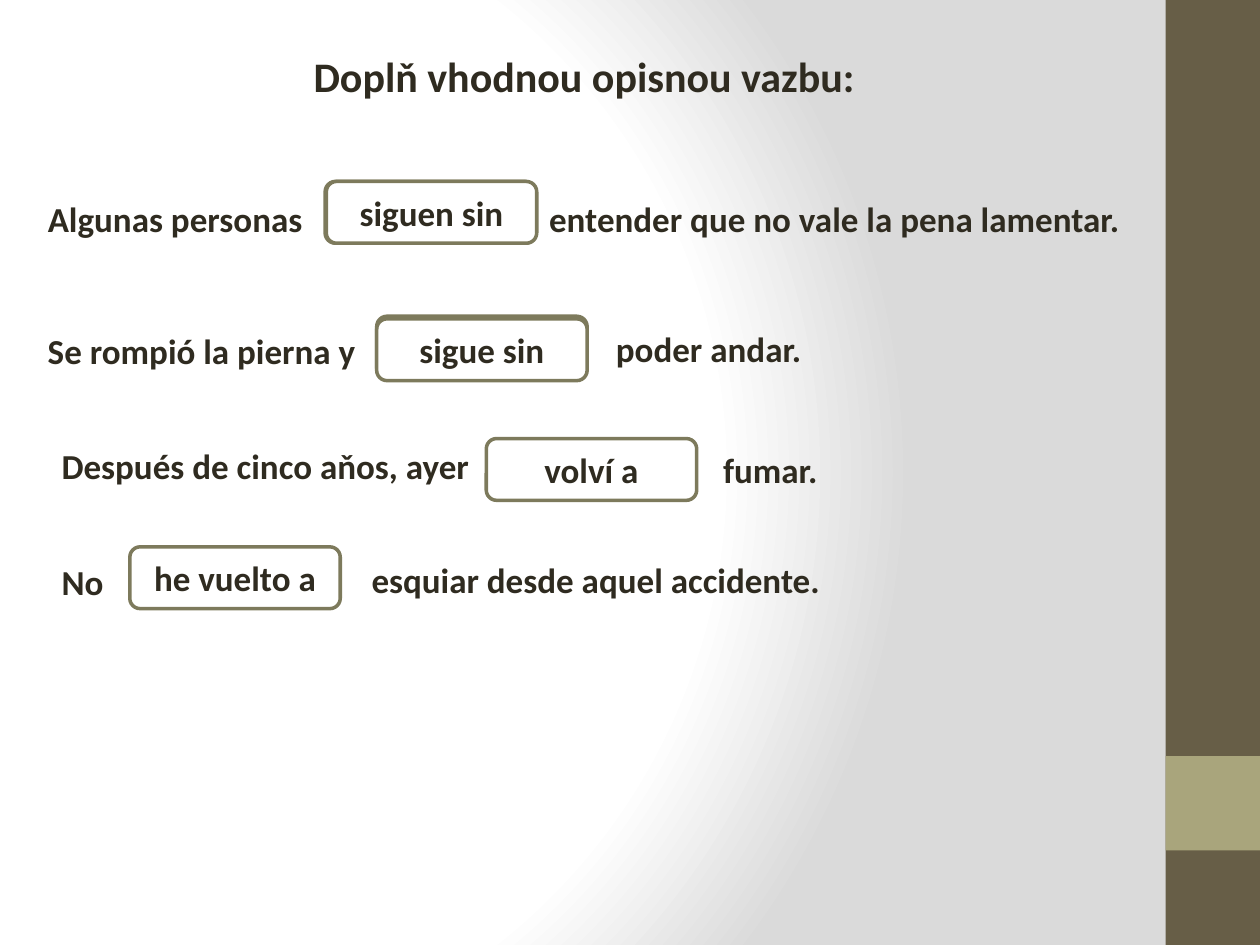
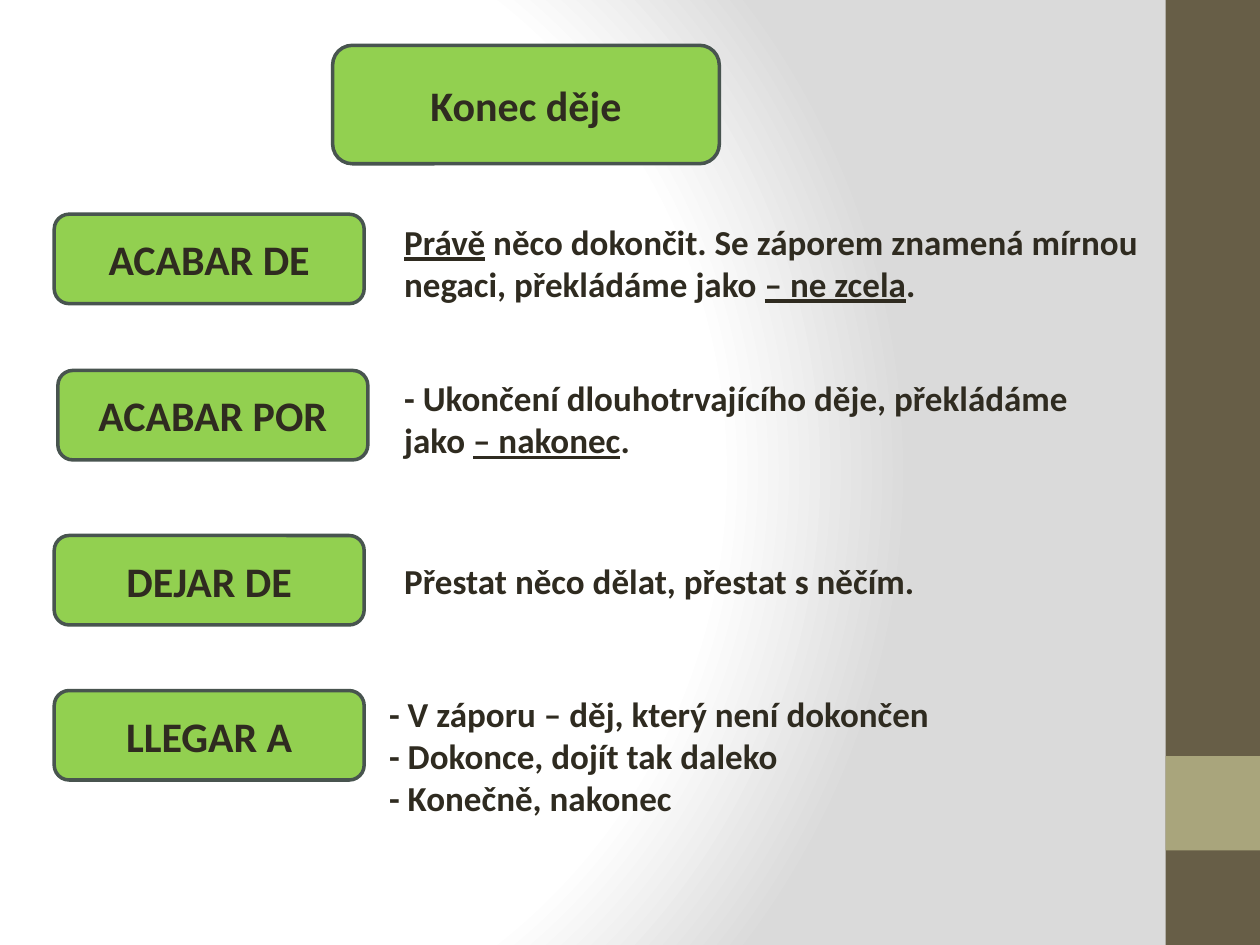
import dataclasses

import lxml.etree
import pptx
import pptx.dml.color
import pptx.enum.shapes
import pptx.enum.text
import pptx.oxml
import pptx.oxml.ns
import pptx.util

Pt = pptx.util.Pt
Shape = pptx.enum.shapes.MSO_SHAPE
Align = pptx.enum.text.PP_ALIGN
Anchor = pptx.enum.text.MSO_ANCHOR
AutoSize = pptx.enum.text.MSO_AUTO_SIZE


@dataclasses.dataclass(frozen=True)
class Theme:
    font: str = "Calibri"
    ink: str = "2F2B20"
    paper: str = "FFFFFF"
    shade: str = "DADADA"
    band: str = "675E47"
    band_accent: str = "A9A57C"
    gap_line: str = "7D7A5C"
    term_fill: str = "92D050"
    term_line: str = "48544F"
    heading: int = 24
    body: int = 20
    line_width: int = 2


def color(code):
    return pptx.dml.color.RGBColor.from_string(code)


def write(frame, text, *, theme, size, align=Align.LEFT):
    """Fill a frame, one paragraph per line; _underscores_ mark underlining."""
    for number, line in enumerate(text.split("\n")):
        para = frame.paragraphs[0] if number == 0 else frame.add_paragraph()
        para.alignment = align
        for part, words in enumerate(line.split("_")):
            if not words:
                continue
            span = para.add_run()
            span.text = words
            span.font.name = theme.font
            span.font.size = Pt(size)
            span.font.bold = True
            span.font.color.rgb = color(theme.ink)
            if part % 2:
                span.font.underline = True


class Lesson:
    width, height = 720, 540
    band_width = 54
    gap_size = (120.24, 35.3)
    term_size = (177.1, 51.1)

    def __init__(self, theme):
        self.theme = theme
        self.deck = pptx.Presentation()
        self.deck.slide_width = Pt(self.width)
        self.deck.slide_height = Pt(self.height)
        self.page = None
        self.paint_background()

    def paint_background(self):
        master = self.deck.slide_master
        master.background.fill.solid()
        stops = ((0, self.theme.paper), (75, self.theme.paper), (100, self.theme.shade))
        stop_xml = "".join(
            f'<a:gs pos="{place * 1000}"><a:srgbClr val="{code}"/></a:gs>'
            for place, code in stops
        )
        gradient = lxml.etree.fromstring(
            f'<a:gradFill xmlns:a="{pptx.oxml.ns.nsuri("a")}" rotWithShape="1">'
            f"<a:gsLst>{stop_xml}</a:gsLst>"
            '<a:path path="circle">'
            '<a:fillToRect l="20000" t="50000" r="100000" b="50000"/>'
            "</a:path></a:gradFill>"
        )
        solid = master.element.find(".//" + pptx.oxml.ns.qn("p:bgPr")).find(
            pptx.oxml.ns.qn("a:solidFill")
        )
        solid.getparent().replace(solid, gradient)

    def new_page(self):
        self.page = self.deck.slides.add_slide(self.deck.slide_layouts[6])
        left = self.width - self.band_width
        self.shape(Shape.RECTANGLE, left, 0, self.band_width, self.height, self.theme.band)
        self.shape(Shape.RECTANGLE, left, 432, self.band_width, self.band_width,
                   self.theme.band_accent)

    def shape(self, kind, left, top, width, height, fill, line=None):
        box = self.page.shapes.add_shape(kind, Pt(left), Pt(top), Pt(width), Pt(height))
        box.shadow.inherit = False
        box.fill.solid()
        box.fill.fore_color.rgb = color(fill)
        if line:
            box.line.color.rgb = color(line)
            box.line.width = Pt(self.theme.line_width)
        else:
            box.line.fill.background()
        return box

    def panel(self, left, top, size, text, fill, line, text_size):
        box = self.shape(Shape.ROUNDED_RECTANGLE, left, top, *size, fill, line)
        if text:
            box.text_frame.vertical_anchor = Anchor.MIDDLE
            write(box.text_frame, text, theme=self.theme, size=text_size, align=Align.CENTER)

    def gap(self, left, top, answer=""):
        self.panel(left, top, self.gap_size, answer, self.theme.paper,
                   self.theme.gap_line, self.theme.body)

    def term(self, left, top, text, size=term_size):
        self.panel(left, top, size, text, self.theme.term_fill,
                   self.theme.term_line, self.theme.heading)

    def label(self, left, top, width, text, size=None):
        size = size or self.theme.body
        height = 1.2 * size * len(text.split("\n")) + 7.2
        box = self.page.shapes.add_textbox(Pt(left), Pt(top), Pt(width), Pt(height))
        box.text_frame.word_wrap = False
        box.text_frame.auto_size = AutoSize.SHAPE_TO_FIT_TEXT
        write(box.text_frame, text, theme=self.theme, size=size)


def build_exercise(lesson):
    lesson.new_page()
    lesson.label(172.1, 25.2, 326.9, "Doplň vhodnou opisnou vazbu:", lesson.theme.heading)
    for left, top in ((185.8, 103.7), (215.3, 180.7)):
        lesson.gap(left, top)
    sentences = (
        ((20.2, 109.4, 166.3, "Algunas personas"),
         (186.5, 103.7, "siguen sin"),
         (306.7, 109.4, 343.4, "entender que no vale la pena lamentar.")),
        ((20.2, 185, 196.6, "Se rompió la pierna y"),
         (215.3, 182.2, "sigue sin"),
         (344.9, 183.6, 121.7, "poder andar.")),
        ((28.1, 250.6, 249.8, "Después de cinco aňos, ayer"),
         (277.9, 250.6, "volví a"),
         (406.1, 252.7, 69.1, "fumar.")),
        ((28.1, 316.8, 43.2, "No"),
         (74.2, 312.5, "he vuelto a"),
         (205.2, 315.4, 272.9, "esquiar desde aquel accidente.")),
    )
    for before, answer, after in sentences:
        lesson.label(*before)
        lesson.gap(*answer)
        lesson.label(*after)


def build_end_of_action(lesson):
    lesson.new_page()
    lesson.term(190.1, 25.9, "Konec děje", size=(221, 67.7))
    entries = (
        ((31, 122.4, "ACABAR DE"),
         (223.9, 122.4, 442.1,
          "_Právě_ něco dokončit. Se záporem znamená mírnou\n"
          "negaci, překládáme jako _– ne zcela_.")),
        ((33.1, 211.7, "ACABAR POR"),
         (223.9, 211.7, 401.8,
          "- Ukončení dlouhotrvajícího děje, překládáme\n"
          "jako _– nakonec_.")),
        ((31, 306, "DEJAR DE"),
         (223.9, 316.1, 308.2, "Přestat něco dělat, přestat s něčím.")),
        ((31, 394.6, "LLEGAR A"),
         (215.3, 392.4, 326.2,
          "- V záporu – děj, který není dokončen\n"
          "- Dokonce, dojít tak daleko\n"
          "- Konečně, nakonec")),
    )
    for term, meaning in entries:
        lesson.term(*term)
        lesson.label(*meaning)


def main():
    lesson = Lesson(Theme())
    build_exercise(lesson)
    build_end_of_action(lesson)
    lesson.deck.save("out.pptx")


if __name__ == "__main__":
    main()
